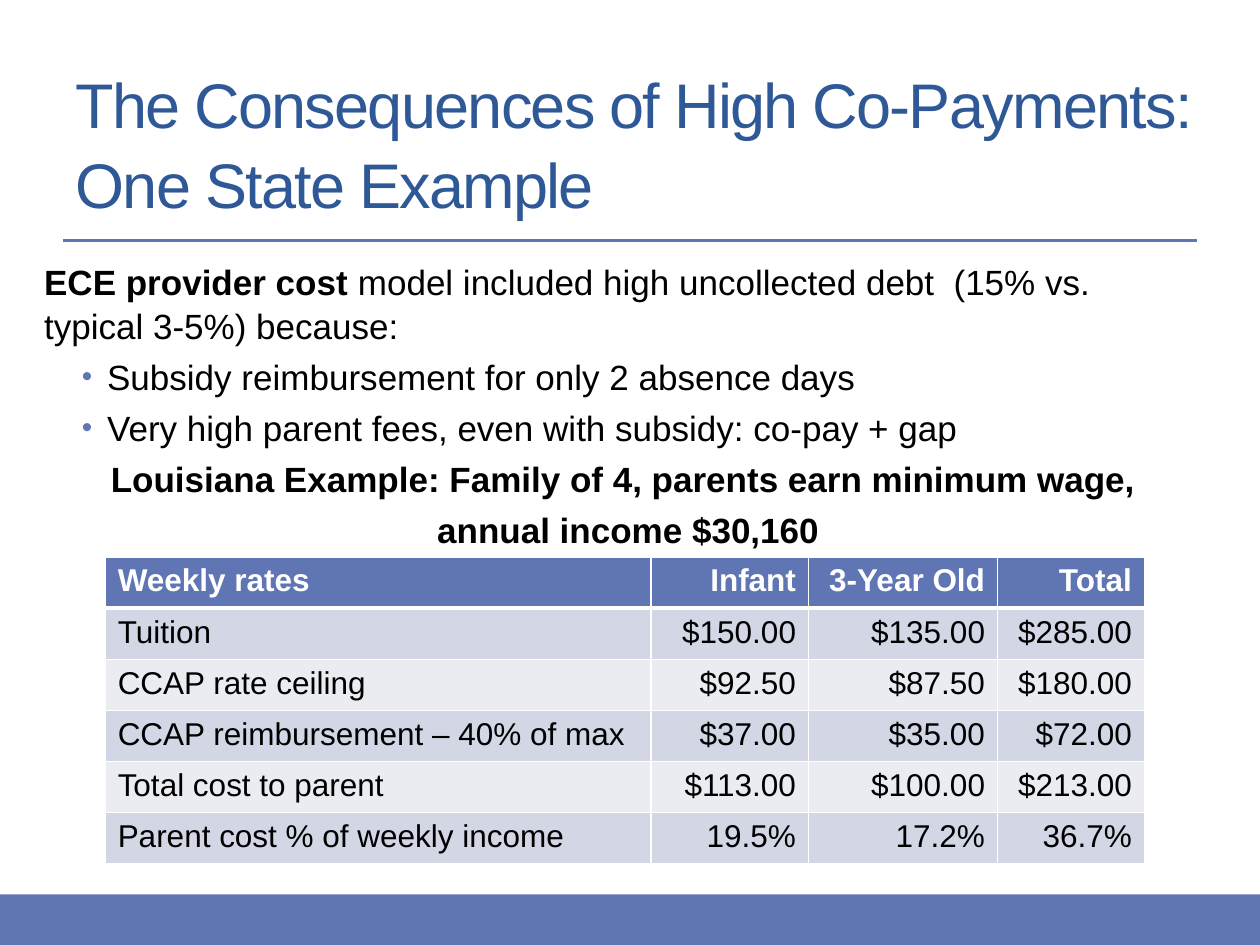
"""Build the slide on high co-payments with its table of weekly rates."""
from lxml.etree import SubElement
from pptx import Presentation
from pptx.dml.color import RGBColor
from pptx.enum.shapes import MSO_CONNECTOR, MSO_SHAPE
from pptx.enum.text import MSO_ANCHOR, MSO_AUTO_SIZE, PP_ALIGN
from pptx.oxml.ns import qn
from pptx.util import Cm, Pt

COLORS = {"blue": "6076B4", "title": "2F5897", "black": "000000",
          "white": "FFFFFF", "dark": "D2D6E5", "light": "EAECF2"}
RATES = [
    ("Weekly rates", "Infant", "3-Year Old", "Total"),
    ("Tuition", "$150.00", "$135.00", "$285.00"),
    ("CCAP rate ceiling", "$92.50", "$87.50", "$180.00"),
    ("CCAP reimbursement – 40% of max", "$37.00", "$35.00", "$72.00"),
    ("Total cost to parent", "$113.00", "$100.00", "$213.00"),
    ("Parent cost % of weekly income", "19.5%", "17.2%", "36.7%"),
]
POINTS = [
    "Subsidy reimbursement for only 2 absence days",
    "Very high parent fees, even with subsidy: co-pay + gap",
]
FAMILY = [
    "Louisiana Example: Family of 4, parents earn minimum wage, ",
    "annual income $30,160",
]


def tint(name):
    return RGBColor.from_string(COLORS[name])


def write(par, text, size=20, color="black", bold=False, align=None,
          lines=None, before=None, track=None):
    run = par.add_run()
    run.text = text
    font = run.font
    font.name, font.size, font.bold = "Arial", Pt(size), bold
    font.color.rgb = tint(color)
    if align is not None:
        par.alignment = align
    if lines:
        par.line_spacing = lines
    if before is not None:
        par.space_before = Pt(before)
    if track:
        run._r.get_or_add_rPr().set("spc", str(track * 100))


def indent(par, bullet):
    props = par._p.get_or_add_pPr()
    props.set("marL", str(Cm(1.27)))
    props.set("indent", str(Cm(-0.51)))
    if bullet:
        color = SubElement(props, qn("a:buClr"))
        SubElement(color, qn("a:srgbClr"), val=COLORS["blue"])
        SubElement(props, qn("a:buSzPct"), val="85000")
        SubElement(props, qn("a:buFont"), typeface="Arial")
        SubElement(props, qn("a:buChar"), char="•")
    else:
        SubElement(props, qn("a:buNone"))


def edge(cell, side, width):
    line = SubElement(cell._tc.get_or_add_tcPr(), qn("a:ln" + side),
                      w=str(Pt(width)))
    fill = SubElement(line, qn("a:solidFill"))
    SubElement(fill, qn("a:srgbClr"), val=COLORS["white"])


class Deck:
    def __init__(self):
        self.file = Presentation()
        self.file.slide_width, self.file.slide_height = Cm(25.4), Cm(19.05)
        self.slide = self.file.slides.add_slide(self.file.slide_layouts[5])
        self.shapes = self.slide.shapes
        self.size, self.lines = 20, 1.05

    def bar(self, x, y, w, h):
        bar = self.shapes.add_shape(MSO_SHAPE.RECTANGLE,
                                    Cm(x), Cm(y), Cm(w), Cm(h))
        bar.shadow.inherit = False
        bar.fill.solid()
        bar.fill.fore_color.rgb = tint("blue")
        bar.line.fill.background()

    def rule(self, x, y, end):
        rule = self.shapes.add_connector(MSO_CONNECTOR.STRAIGHT,
                                         Cm(x), Cm(y), Cm(end), Cm(y))
        rule.line.color.rgb = tint("blue")
        rule.line.width = Pt(2.08)
        SubElement(rule._element.spPr, qn("a:effectLst"))

    def title(self, text, x, y, w, h):
        title = self.shapes.title
        title.left, title.top = Cm(x), Cm(y)
        title.width, title.height = Cm(w), Cm(h)
        frame = title.text_frame
        frame.auto_size = MSO_AUTO_SIZE.NONE
        frame.vertical_anchor = MSO_ANCHOR.MIDDLE
        write(frame.paragraphs[0], text, size=36, color="title",
              align=PP_ALIGN.LEFT, lines=self.lines, track=-1)

    def body(self, lead, rest, x, y, w, h):
        frame = self.shapes.add_textbox(Cm(x), Cm(y), Cm(w), Cm(h)).text_frame
        frame.word_wrap = True
        first = frame.paragraphs[0]
        write(first, lead, self.size, bold=True, lines=self.lines)
        write(first, rest, self.size)
        for text in POINTS + FAMILY:
            par = frame.add_paragraph()
            point = text in POINTS
            indent(par, point)
            write(par, text, self.size, bold=not point, before=4,
                  align=PP_ALIGN.LEFT if point else PP_ALIGN.CENTER,
                  lines=self.lines)

    def table(self, rows, x, y, widths, height):
        grid = self.shapes.add_table(
            len(rows), len(widths), Cm(x), Cm(y), Cm(sum(widths)),
            Cm(height * len(rows))).table
        for col, width in zip(grid.columns, widths):
            col.width = Cm(width)
        for r, row in enumerate(rows):
            grid.rows[r].height = Cm(height)
            shade = "blue" if r == 0 else "dark" if r % 2 else "light"
            for c, text in enumerate(row):
                cell = grid.cell(r, c)
                for side in "LRTB":
                    thick = (r, side) in ((0, "B"), (1, "T"))
                    edge(cell, side, 3 if thick else 1)
                cell.fill.solid()
                cell.fill.fore_color.rgb = tint(shade)
                write(cell.text_frame.paragraphs[0], text, size=18,
                      color="black" if r else "white", bold=r == 0,
                      align=PP_ALIGN.RIGHT if c else PP_ALIGN.LEFT)


def main():
    deck = Deck()
    deck.bar(0, 18.03, 25.4, 1.02)
    deck.rule(1.27, 4.85, 24.13)
    deck.title("The Consequences of High Co-Payments: One State Example",
               1.27, 1.48, 23.5, 2.74)
    deck.body("ECE provider cost ",
              "model included high uncollected debt  (15% vs. typical 3-5%) "
              "because:", 0.64, 5.08, 23.29, 12.27)
    deck.table(RATES, 2.12, 11.23, (11, 3.18, 3.81, 2.96), 1.03)
    deck.file.save("out.pptx")


if __name__ == "__main__":
    main()
